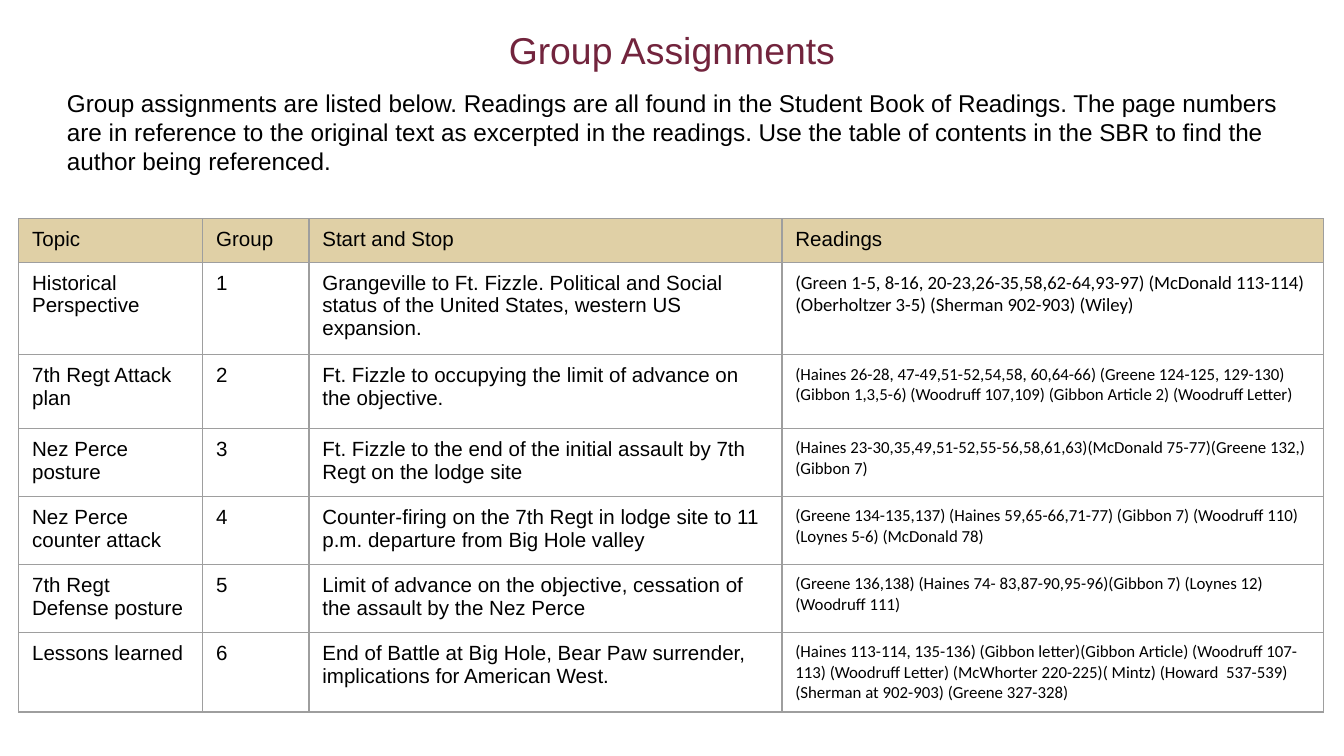
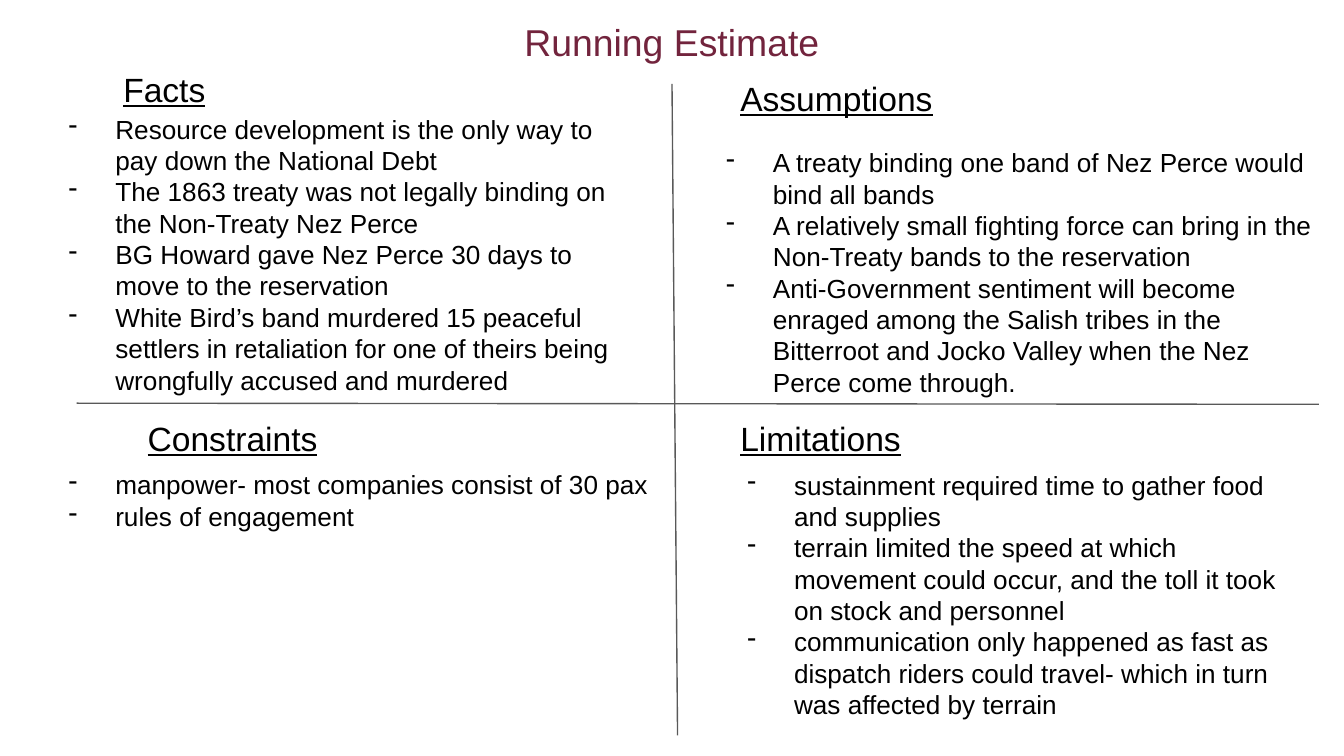
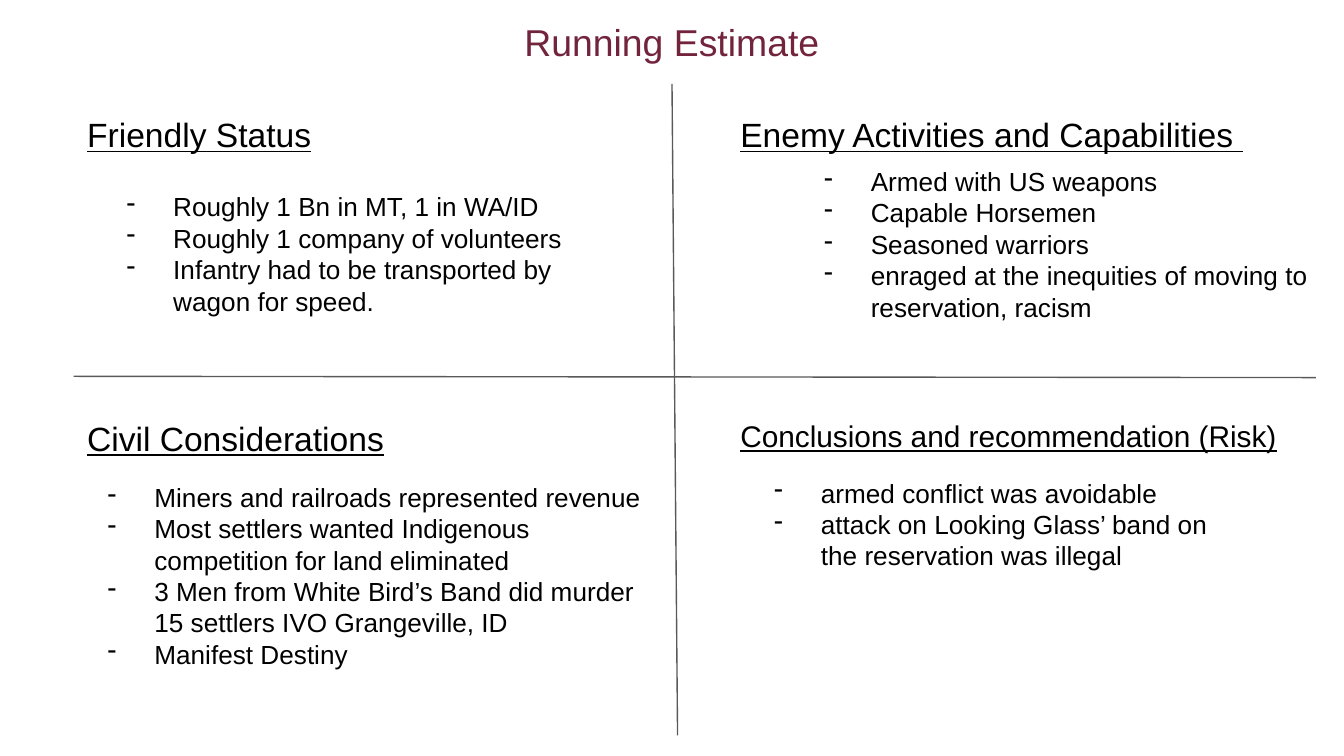
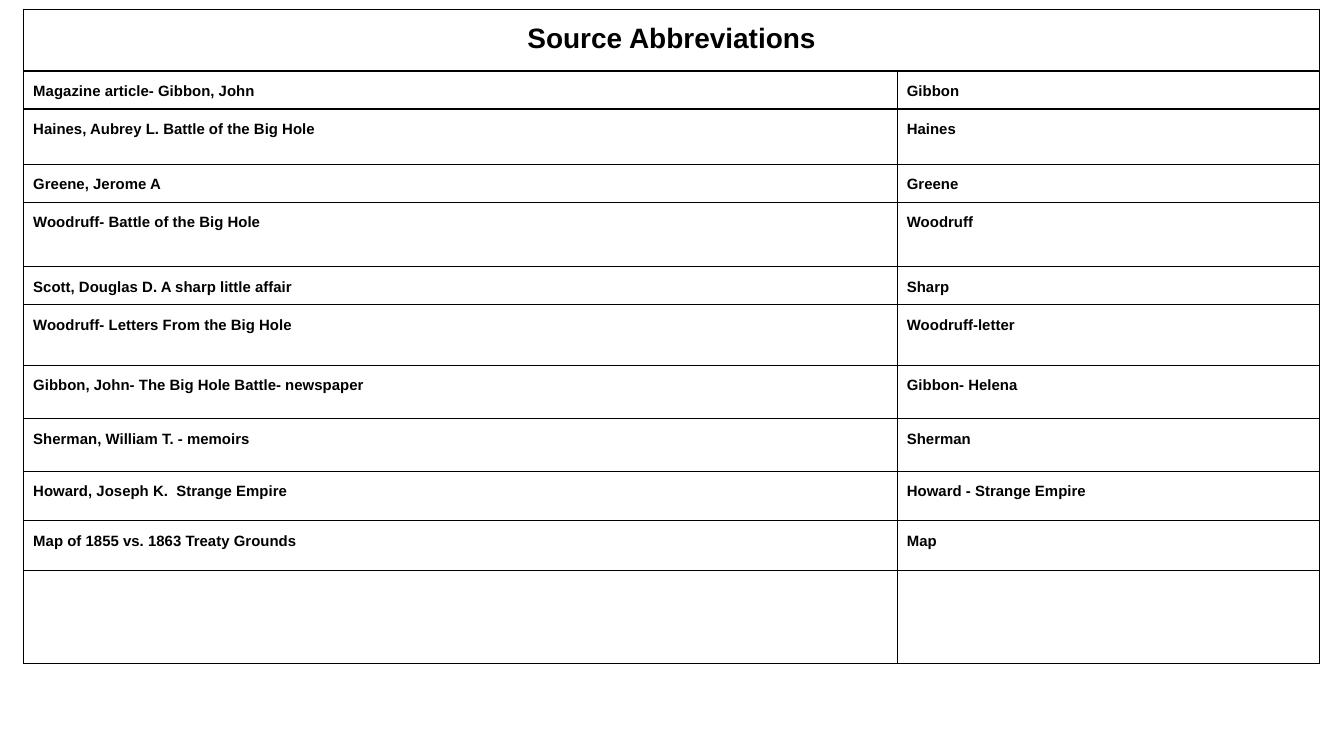
"""Build four slides on group assignments, running estimates and source abbreviations."""
import pptx
import pptx.dml.color
import pptx.enum.shapes
import pptx.enum.text
import pptx.oxml
import pptx.oxml.ns
import pptx.util
from lxml import etree

Pt = pptx.util.Pt
RGBColor = pptx.dml.color.RGBColor
PP_ALIGN = pptx.enum.text.PP_ALIGN
MSO_ANCHOR = pptx.enum.text.MSO_ANCHOR
qn = pptx.oxml.ns.qn

MAROON = RGBColor(0x72, 0x24, 0x3D)
BLACK = RGBColor(0, 0, 0)
SAND = RGBColor(0xE0, 0xD0, 0xA6)
SILVER = RGBColor(0x9E, 0x9E, 0x9E)
GREY = RGBColor(0x59, 0x59, 0x59)

INTRO = (
    "Group assignments are listed below. Readings are all found in the Student Book of Readings. "
    "The page numbers are in reference to the original text as excerpted in the readings. "
    "Use the table of contents in the SBR to find the author being referenced."
)
ASSIGNMENTS = [
    ("Topic", "Group", "Start and Stop", "Readings"),
    ("Historical Perspective", "1",
     "Grangeville to Ft. Fizzle. Political and Social status of the United States, western US expansion.",
     "(Green 1-5, 8-16, 20-23,26-35,58,62-64,93-97) (McDonald 113-114) (Oberholtzer 3-5) "
     "(Sherman 902-903) (Wiley)"),
    ("7th Regt Attack plan", "2",
     "Ft. Fizzle to occupying the limit of advance on the objective.",
     "(Haines 26-28, 47-49,51-52,54,58, 60,64-66) (Greene 124-125, 129-130) (Gibbon 1,3,5-6) "
     "(Woodruff 107,109) (Gibbon Article 2) (Woodruff Letter)"),
    ("Nez Perce posture", "3",
     "Ft. Fizzle to the end of the initial assault by 7th Regt on the lodge site",
     "(Haines 23-30,35,49,51-52,55-56,58,61,63)(McDonald 75-77)(Greene 132,)(Gibbon 7)"),
    ("Nez Perce counter attack", "4",
     "Counter-firing on the 7th Regt in lodge site to 11 p.m. departure from Big Hole valley",
     "(Greene 134-135,137) (Haines 59,65-66,71-77) (Gibbon 7) (Woodruff 110) (Loynes 5-6) "
     "(McDonald 78)"),
    ("7th Regt Defense posture", "5",
     "Limit of advance on the objective, cessation of the assault by the Nez Perce",
     "(Greene 136,138) (Haines 74- 83,87-90,95-96)(Gibbon 7) (Loynes 12)(Woodruff 111)"),
    ("Lessons learned", "6",
     "End of Battle at Big Hole, Bear Paw surrender, implications for American West.",
     "(Haines 113-114, 135-136) (Gibbon letter)(Gibbon Article) (Woodruff 107-113) "
     "(Woodruff Letter) (McWhorter 220-225)( Mintz) (Howard  537-539) "
     "(Sherman at 902-903) (Greene 327-328)"),
]
ASSIGNMENT_COLS = (98.6, 56.9, 253.4, 290)
ASSIGNMENT_ROWS = (22.5, 46.8, 39.6, 34.6, 34.6, 34.6, 39.6)

ESTIMATES = [
    {
        "divider": (41, 216, 706.5, 216.6),
        "quadrants": [
            ("Facts", 18, (59, 29.5, 114, 36), (18.7, 53.3, 322, 184), [
                "Resource development is the only way to pay down the National Debt",
                "The 1863 treaty was not legally binding on the Non-Treaty Nez Perce",
                "BG Howard gave Nez Perce 30 days to move to the reservation",
                "White Bird’s band murdered 15 peaceful settlers in retaliation for one of theirs "
                "being wrongfully accused and murdered"]),
            ("Assumptions", 18, (389.5, 34.5, 177, 36), (371, 71.3, 340.5, 150.5), [
                "A treaty binding one band of Nez Perce would bind all bands",
                "A relatively small fighting force can bring in the Non-Treaty bands to the reservation",
                "Anti-Government sentiment will become enraged among the Salish tribes in the "
                "Bitterroot and Jocko Valley when the Nez Perce come through."]),
            ("Constraints", 18, (72, 216.7, 145, 36), (18.7, 244, 340.5, 48), [
                "manpower- most companies consist of 30 pax",
                "rules of engagement"]),
            ("Limitations", 18, (389.5, 216.7, 138, 36), (382.3, 244, 313, 150.5), [
                "sustainment required time to gather food and supplies",
                "terrain limited the speed at which movement could occur, and the toll it took "
                "on stock and personnel",
                "communication only happened as fast as dispatch riders could travel- which in "
                "turn was affected by terrain"]),
        ],
    },
    {
        "divider": (39.5, 201.6, 705, 202.3),
        "quadrants": [
            ("Friendly Status", 18, (39.6, 54, 229, 36), (49.7, 95, 293.8, 99.4), [
                "Roughly 1 Bn in MT, 1 in WA/ID",
                "Roughly 1 company of volunteers",
                "Infantry had to be transported by wagon for speed."]),
            ("Enemy Activities and Capabilities ", 18, (389.5, 54, 315.4, 36),
             (423.4, 81.4, 306, 99.4), [
                "Armed with US weapons",
                "Capable Horsemen",
                "Seasoned warriors",
                "enraged at the inequities of moving to reservation, racism"]),
            ("Civil Considerations", 18, (39.6, 216.7, 235, 36), (39.6, 250.6, 315.4, 116.6), [
                "Miners and railroads represented revenue",
                "Most settlers wanted Indigenous competition for land eliminated",
                "3 Men from White Bird’s Band did murder 15 settlers IVO Grangeville, ID",
                "Manifest Destiny"]),
            ("Conclusions and recommendation (Risk)", 16, (389.5, 216.7, 330.5, 34),
             (396.7, 248.4, 276.5, 82), [
                "armed conflict was avoidable",
                "attack on Looking Glass’ band on the reservation was illegal"]),
        ],
    },
]

SOURCES = [
    ("Source Abbreviations", ""),
    ("Magazine article- Gibbon, John", "Gibbon"),
    ("Haines, Aubrey L. Battle of the Big Hole", "Haines"),
    ("Greene, Jerome A", "Greene"),
    ("Woodruff- Battle of the Big Hole", "Woodruff"),
    ("Scott, Douglas D. A sharp little affair", "Sharp"),
    ("Woodruff- Letters From the Big Hole", "Woodruff-letter"),
    ("Gibbon, John- The Big Hole Battle- newspaper", "Gibbon- Helena"),
    ("Sherman, William T. - memoirs", "Sherman"),
    ("Howard, Joseph K.  Strange Empire", "Howard - Strange Empire"),
    ("Map of 1855 vs. 1863 Treaty Grounds", "Map"),
    ("", ""),
]
SOURCE_COLS = (468, 226)
SOURCE_ROWS = (33.1, 15.1, 29.5, 15.8, 34.6, 19.4, 32.4, 28.8, 28.1, 26.6, 26.6, 49.7)


def write(tf, lines, size=14, color=BLACK, font="Arial", bold=False, underline=False,
          align=None, bullet=None, spacing=None, before=None):
    for i, text in enumerate(lines):
        p = tf.paragraphs[0] if i == 0 else tf.add_paragraph()
        if align is not None:
            p.alignment = align
        if spacing:
            p.line_spacing = spacing
        if before:
            p.space_before = Pt(before)
        if bullet:
            pPr = p._p.get_or_add_pPr()
            pPr.set("marL", str(Pt(36)))
            pPr.set("indent", str(-Pt(25)))
            clr = etree.SubElement(pPr, qn("a:buClr"))
            etree.SubElement(clr, qn("a:srgbClr"), val=str(color))
            etree.SubElement(pPr, qn("a:buChar"), char=bullet)
        r = p.add_run()
        r.text = text
        r.font.size = Pt(size)
        r.font.name = font
        r.font.bold = bold
        r.font.underline = underline
        r.font.color.rgb = color


def add_text(s, box, lines, inset=7.2, anchor=MSO_ANCHOR.TOP, grow=True, **fmt):
    tf = s.shapes.add_textbox(*map(Pt, box)).text_frame
    tf.word_wrap = True
    tf.vertical_anchor = anchor
    if grow:
        tf.auto_size = pptx.enum.text.MSO_AUTO_SIZE.SHAPE_TO_FIT_TEXT
    tf.margin_left = tf.margin_top = tf.margin_right = tf.margin_bottom = Pt(inset)
    write(tf, lines, **fmt)


def add_title(s, text, top=0):
    add_text(s, (72, top, 576, 44.6), [text], inset=3.6, anchor=MSO_ANCHOR.MIDDLE, grow=False,
             size=20, color=MAROON, align=PP_ALIGN.CENTER)


def add_line(s, x1, y1, x2, y2):
    line = s.shapes.add_connector(pptx.enum.shapes.MSO_CONNECTOR.STRAIGHT,
                                  Pt(x1), Pt(y1), Pt(x2), Pt(y2))
    line.line.color.rgb = GREY
    line.line.width = Pt(0.75)
    etree.SubElement(line._element.spPr, qn("a:effectLst"))


def border(cell, color, width):
    tcPr = cell._tc.get_or_add_tcPr()
    for side in ("a:lnL", "a:lnR", "a:lnT", "a:lnB"):
        ln = etree.SubElement(tcPr, qn(side), w=str(Pt(width)))
        fill = etree.SubElement(ln, qn("a:solidFill"))
        etree.SubElement(fill, qn("a:srgbClr"), val=str(color))


def add_table(s, left, top, cols, rows, data, color, width, inset_x, cell_format, header=None):
    table = s.shapes.add_table(len(rows), len(cols), Pt(left), Pt(top),
                               Pt(sum(cols)), Pt(sum(rows))).table
    table.first_row = table.horz_banding = False
    for column, w in zip(table.columns, cols):
        column.width = Pt(w)
    for row, h in zip(table.rows, rows):
        row.height = Pt(h)
    for i, texts in enumerate(data):
        for j, text in enumerate(texts):
            cell = table.cell(i, j)
            border(cell, color, width)
            if header and i == 0:
                cell.fill.solid()
                cell.fill.fore_color.rgb = header
            else:
                cell.fill.background()
            cell.margin_left = cell.margin_right = Pt(inset_x)
            cell.margin_top = cell.margin_bottom = Pt(5)
            if text:
                write(cell.text_frame, [text], **cell_format(i, j))
    return table


def assignment_format(i, j):
    if i and j == 3:
        return {"size": 10 if i == 1 else 9, "font": "Calibri"}
    return {"size": 11}


def source_format(i, j):
    fmt = {"size": 8, "bold": True, "spacing": 1.15, "before": 9}
    if i == 0:
        fmt.update(size=15, align=PP_ALIGN.CENTER)
    return fmt


def main():
    prs = pptx.Presentation()
    prs.slide_width, prs.slide_height = Pt(720), Pt(405)
    blank = prs.slide_layouts[6]

    s = prs.slides.add_slide(blank)
    add_title(s, "Group Assignments", top=4.5)
    add_table(s, 10, 117.2, ASSIGNMENT_COLS, ASSIGNMENT_ROWS, ASSIGNMENTS,
              SILVER, 0.75, 7.2, assignment_format, header=SAND)
    add_text(s, (28.8, 39.8, 677.5, 62), [INTRO], size=13)

    for estimate in ESTIMATES:
        s = prs.slides.add_slide(blank)
        add_title(s, "Running Estimate")
        add_line(s, 360, 45, 363, 394)
        add_line(s, *estimate["divider"])
        for heading, size, heading_box, body_box, points in estimate["quadrants"]:
            add_text(s, heading_box, [heading], size=size, underline=True)
            add_text(s, body_box, points, bullet="-")

    s = prs.slides.add_slide(blank)
    table = add_table(s, 12.8, 5, SOURCE_COLS, SOURCE_ROWS, SOURCES,
                      BLACK, 0.67, 5, source_format)
    table.cell(0, 0).merge(table.cell(0, 1))

    prs.save("out.pptx")


if __name__ == "__main__":
    main()
